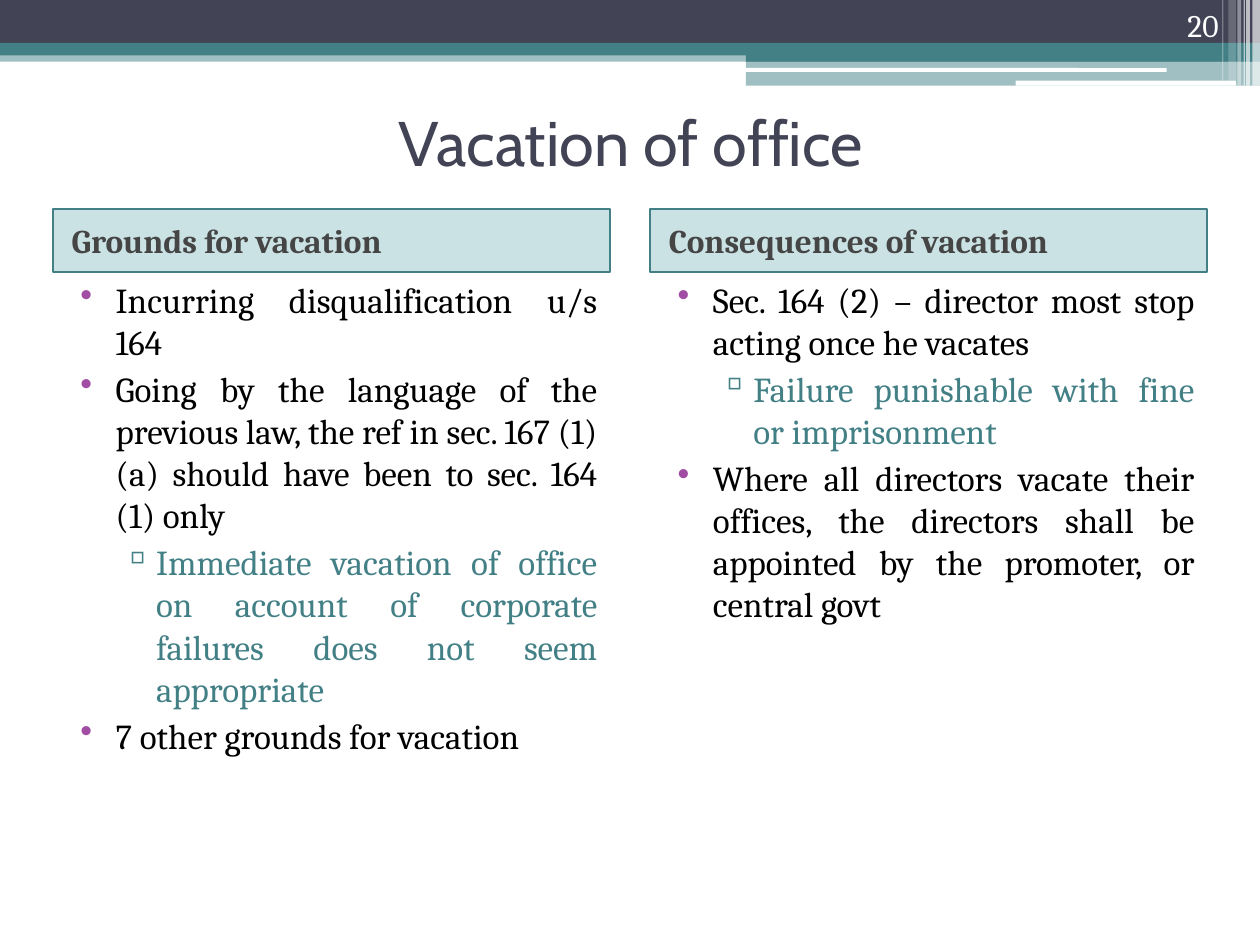
from lxml.etree import SubElement
from pptx import Presentation
from pptx.dml.color import RGBColor
from pptx.enum.shapes import MSO_SHAPE
from pptx.enum.text import MSO_ANCHOR, PP_ALIGN
from pptx.oxml.ns import qn
from pptx.util import Inches, Pt

TEAL, NAVY, WHITE, BLACK = "438086", "424456", "FFFFFF", "000000"
PURPLE, GREY, HEADER_TEAL = "A04DA3", "454545", "328E97"
BODY_FONT, TITLE_FONT = "Cambria", "Cabin"

# Each level: left margin, indent, bullet, bullet colour, text colour
LEVELS = [
    (0.4, -0.28, "•", PURPLE, BLACK),
    (0.72, -0.27, "▫", TEAL, TEAL),
]

BANDS = [  # left, top, width, height, colour, opacity
    (0, 0.4, 10, 0.09, TEAL, 50),
    (0, 0, 10, 0.34, NAVY, 100),
    (0, 0.34, 10, 0.1, TEAL, 100),
    (5.92, 0.39, 4.08, 0.1, TEAL, 100),
    (5.92, 0.48, 4.08, 0.2, TEAL, 50),
]
WHITE_BARS = [(5.91, 0.54, 3.35, 0.03), (8.06, 0.64, 1.75, 0.04)]
STRIPES = [  # left, width, height, opacity
    (9.94, 0.06, 0.68, 65),
    (9.89, 0.03, 0.68, 65),
    (9.87, 0.01, 0.68, 60),
    (9.82, 0.03, 0.68, 40),
    (9.75, 0.06, 0.64, 20),
    (9.7, 0.01, 0.64, 30),
]

COLUMNS = [  # left, heading, (level, text) items
    (0.42, "Grounds for vacation", [
        (0, "Incurring disqualification u/s 164"),
        (0, "Going by the language of the previous law, the ref in "
            "sec. 167 (1) (a) should have been to sec. 164 (1) only"),
        (1, "Immediate vacation of office on account of corporate "
            "failures does not seem appropriate"),
        (0, "7 other grounds for vacation"),
    ]),
    (5.16, "Consequences of vacation", [
        (0, "Sec. 164 (2) – director most stop acting once he vacates"),
        (1, "Failure punishable with fine or imprisonment"),
        (0, "Where all directors vacate their offices, the directors "
            "shall be appointed by the promoter, or central govt"),
    ]),
]


def color(value):
    return RGBColor.from_string(value)


def add_bar(page, box, fill, opacity=100, kind=MSO_SHAPE.RECTANGLE):
    bar = page.shapes.add_shape(kind, *map(Inches, box))
    bar.shadow.inherit = False
    bar.line.fill.background()
    bar.fill.solid()
    bar.fill.fore_color.rgb = color(fill)
    if opacity < 100:
        tint = bar.fill._xPr.find(qn("a:solidFill"))[0]
        SubElement(tint, qn("a:alpha"), val=str(opacity * 1000))
    return bar


def add_text_frame(page, box, anchor=MSO_ANCHOR.TOP):
    frame = page.shapes.add_textbox(*map(Inches, box)).text_frame
    frame.word_wrap = True
    frame.vertical_anchor = anchor
    return frame


def style(para, text, size, ink, align, font=BODY_FONT):
    para.text = text
    para.alignment = align
    para.font.name = font
    para.font.size = Pt(size)
    para.font.color.rgb = color(ink)


def set_indent(para, margin, indent):
    props = para._p.get_or_add_pPr()
    props.set("marL", str(Inches(margin)))
    props.set("indent", str(Inches(indent)))
    return props


def add_banner(page):
    for *box, fill, opacity in BANDS:
        add_bar(page, box, fill, opacity)
    for box in WHITE_BARS:
        add_bar(page, box, WHITE, kind=MSO_SHAPE.ROUNDED_RECTANGLE)
    for left, width, height, opacity in STRIPES:
        add_bar(page, (left, 0, width, height), WHITE, opacity)


def add_title(page, box, text):
    frame = add_text_frame(page, box, MSO_ANCHOR.MIDDLE)
    style(frame.paragraphs[0], text, 36, NAVY, PP_ALIGN.CENTER, TITLE_FONT)


def add_page_number(page, box, text):
    frame = add_text_frame(page, box, MSO_ANCHOR.BOTTOM)
    style(frame.paragraphs[0], text, 18, WHITE, PP_ALIGN.RIGHT)


def add_heading(page, box, text):
    heading = add_bar(page, box, HEADER_TEAL, 25)
    heading.line.color.rgb = color(TEAL)
    heading.line.width = Pt(1)
    frame = heading.text_frame
    frame.word_wrap = True
    frame.vertical_anchor = MSO_ANCHOR.MIDDLE
    para = frame.paragraphs[0]
    style(para, text, 19, GREY, PP_ALIGN.JUSTIFY)
    para.font.bold = True
    para.space_before = Pt(3)
    set_indent(para, 0.05, 0)


def add_bullets(page, box, items):
    frame = add_text_frame(page, box)
    for index, (level, text) in enumerate(items):
        para = frame.add_paragraph() if index else frame.paragraphs[0]
        margin, indent, mark, mark_color, ink = LEVELS[level]
        style(para, text, 20, ink, PP_ALIGN.JUSTIFY)
        para.level = level
        para.space_before = Pt(3)
        props = set_indent(para, margin, indent)
        bullet_color = props.makeelement(qn("a:buClr"))
        SubElement(bullet_color, qn("a:srgbClr"), val=mark_color)
        bullet = props.makeelement(qn("a:buChar"), {"char": mark})
        run_defaults = props.find(qn("a:defRPr"))
        run_defaults.addprevious(bullet_color)
        run_defaults.addprevious(bullet)


def add_column(page, box, heading, items, heading_height=0.5):
    left, top, width, height = box
    add_heading(page, (left, top, width, heading_height), heading)
    add_bullets(page, (left, top + heading_height, width,
                       height - heading_height), items)


def main():
    deck = Presentation()
    deck.slide_width, deck.slide_height = Inches(10), Inches(7.5)
    page = deck.slides.add_slide(deck.slide_layouts[6])
    add_banner(page)
    add_title(page, (0.42, 0.83, 9.17, 0.58), "Vacation of office")
    for left, heading, items in COLUMNS:
        add_column(page, (left, 1.66, 4.42, 5.08), heading, items)
    add_page_number(page, (8.94, 0, 0.83, 0.4), "20")
    deck.save("out.pptx")


if __name__ == "__main__":
    main()
